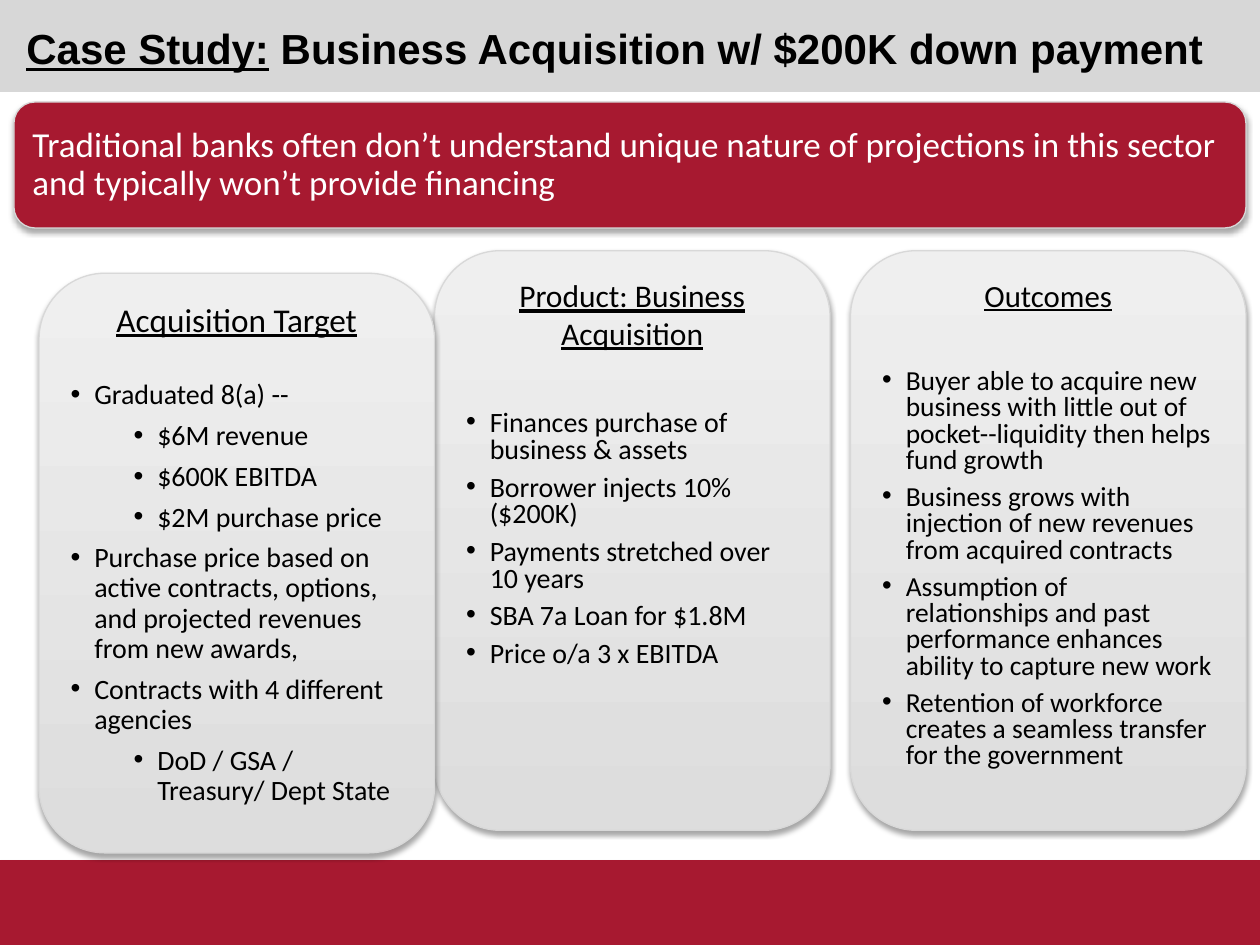
import dataclasses

import lxml.etree
import pptx
import pptx.dml.color
import pptx.enum.shapes
import pptx.enum.text
import pptx.oxml.ns
import pptx.util

Pt = pptx.util.Pt
qn = pptx.oxml.ns.qn
Kind = pptx.enum.shapes.MSO_SHAPE
Anchor = pptx.enum.text.MSO_ANCHOR
Align = pptx.enum.text.PP_ALIGN


@dataclasses.dataclass
class Theme:
    red: str = "A71930"
    band: str = "D7D7D7"
    edge: str = "D8D8D8"
    dark: str = "DDDDDD"
    light: str = "EFEFEF"
    ink: str = "000000"
    white: str = "FFFFFF"
    head: str = "Arial"
    body: str = "Calibri"
    title: float = 24
    lead: float = 20
    space: float = 6
    hang: float = 13.5
    step: float = 36


def rgb(code):
    return pptx.dml.color.RGBColor.from_string(code)


class Deck:
    def __init__(self, theme):
        self.theme = theme
        self.file = pptx.Presentation()
        self.file.slide_width, self.file.slide_height = Pt(720), Pt(540)
        self.slide = self.file.slides.add_slide(self.file.slide_layouts[6])

    def shape(self, kind, box, fill=None, edge=None, shade=True):
        item = self.slide.shapes.add_shape(kind, *map(Pt, box))
        if fill:
            item.fill.solid()
            item.fill.fore_color.rgb = rgb(fill)
        else:
            item.fill.gradient()
            item.fill.gradient_angle = 90
            tones = (self.theme.dark, self.theme.light)
            for stop, tone in zip(item.fill.gradient_stops, tones):
                stop.color.rgb = rgb(tone)
        if edge:
            item.line.color.rgb = rgb(edge)
            item.line.width = Pt(0.75)
        else:
            item.line.fill.background()
        item.shadow.inherit = False
        if shade:
            self.shade(item)
        return item

    def shade(self, item):
        """Add a soft shadow below the shape."""
        effects = item._element.spPr.find(qn("a:effectLst"))
        outer = lxml.etree.SubElement(
            effects, qn("a:outerShdw"), blurRad=str(Pt(3.1)),
            dist=str(Pt(1.8)), dir="5400000", rotWithShape="0")
        color = lxml.etree.SubElement(
            outer, qn("a:srgbClr"), val=self.theme.ink)
        lxml.etree.SubElement(color, qn("a:alpha"), val="35000")

    def run(self, para, text, size, font, color, bold=False, under=False):
        run = para.add_run()
        run.text = text
        run.font.size = Pt(size)
        run.font.name = font
        run.font.color.rgb = rgb(color)
        run.font.bold = bold
        run.font.underline = under

    def title(self, box, label, text):
        frame = self.slide.shapes.add_textbox(*map(Pt, box)).text_frame
        frame.word_wrap = True
        para = frame.paragraphs[0]
        style = (self.theme.title, self.theme.head, self.theme.ink, True)
        self.run(para, label, *style, under=True)
        self.run(para, text, *style)

    def banner(self, box, text):
        theme = self.theme
        item = self.shape(
            Kind.ROUNDED_RECTANGLE, box, theme.red, theme.edge)
        frame = item.text_frame
        frame.word_wrap = True
        frame.vertical_anchor = Anchor.MIDDLE
        para = frame.paragraphs[0]
        para.alignment = Align.LEFT
        para.line_spacing = 0.9
        self.run(para, text, theme.lead, theme.body, theme.white)

    def bullet(self, frame, text, level, size, lead, before):
        theme = self.theme
        para = frame.add_paragraph()
        props = para._p.get_or_add_pPr()
        props.set("marL", str(Pt(theme.hang + level * theme.step)))
        props.set("indent", str(-Pt(theme.hang)))
        lxml.etree.SubElement(props, qn("a:buFont"), typeface=theme.head)
        lxml.etree.SubElement(props, qn("a:buChar"), char="•")
        para.level = level
        para.alignment = Align.LEFT
        para.line_spacing = lead
        para.space_before = Pt(before)
        self.run(para, text, size, theme.body, theme.ink)

    def panel(self, left, top, head, items, sizes, lead, gap):
        """Draw a column; sizes are for heading and bullets."""
        theme = self.theme
        item = self.shape(Kind.ROUNDED_RECTANGLE, (left, top, 226, 331.2),
                          edge=theme.edge)
        frame = item.text_frame
        frame.word_wrap = True
        frame.vertical_anchor = Anchor.TOP
        para = frame.paragraphs[0]
        para.alignment = Align.CENTER
        self.run(para, head, sizes[0], theme.body, theme.ink, under=True)
        for index, (level, text) in enumerate(items):
            before = theme.space if index else gap
            self.bullet(frame, text, level, sizes[1], lead, before)


def main():
    theme = Theme()
    deck = Deck(theme)
    deck.shape(Kind.RECTANGLE, (0, 491.5, 720, 48.5), theme.red)
    deck.shape(Kind.RECTANGLE, (0, 0, 720, 52.5), theme.band, shade=False)
    deck.panel(248.3, 143.3, "Product: Business Acquisition", [
        (0, "Finances purchase of business & assets"),
        (0, "Borrower injects 10% ($200K)"),
        (0, "Payments stretched over 10 years"),
        (0, "SBA 7a Loan for $1.8M"),
        (0, "Price o/a 3 x EBITDA"),
    ], (18, 16), 0.8, 34)
    deck.title((8, 9.5, 704, 40), "Case Study:",
               " Business Acquisition w/ $200K down payment")
    deck.banner((8, 58.3, 704, 72),
                "Traditional banks often don’t understand unique nature of "
                "projections in this sector and typically won’t provide "
                "financing")
    deck.panel(22.3, 156.2, "Acquisition Target", [
        (0, "Graduated 8(a) --"),
        (1, "$6M revenue"),
        (1, "$600K EBITDA"),
        (1, "$2M purchase price"),
        (0, "Purchase price based on active contracts, options, "
            "and projected revenues from new awards,"),
        (0, "Contracts with 4 different agencies"),
        (1, "DoD / GSA / Treasury/ Dept State"),
    ], (19, 16), 0.9, 24)
    deck.panel(486, 143.3, "Outcomes", [
        (0, "Buyer able to acquire new business with little out of "
            "pocket--liquidity then helps fund growth"),
        (0, "Business grows with injection of new revenues "
            "from acquired contracts"),
        (0, "Assumption of relationships and past performance "
            "enhances ability to capture new work"),
        (0, "Retention of workforce creates a seamless transfer "
            "for the government"),
    ], (17.6, 15.7), 0.8, 32)
    deck.file.save("out.pptx")


if __name__ == "__main__":
    main()
